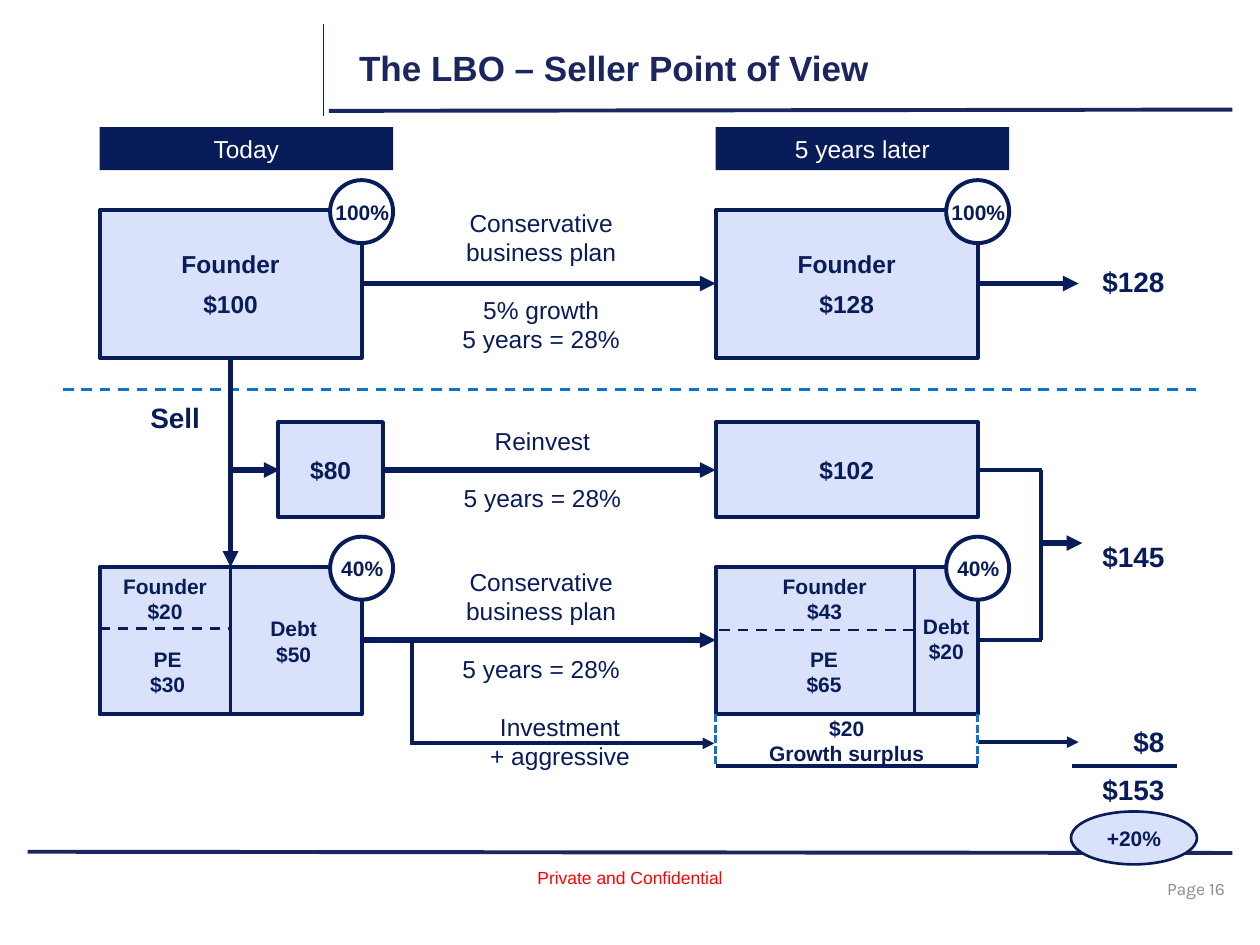
import pptx
import pptx.util
import pptx.dml.color
import pptx.enum.dml
import pptx.enum.shapes
import pptx.enum.text
import pptx.oxml
import pptx.oxml.ns
import lxml.etree

Inches = pptx.util.Inches
Pt = pptx.util.Pt
RGB = pptx.dml.color.RGBColor.from_string
Align = pptx.enum.text.PP_ALIGN
Anchor = pptx.enum.text.MSO_ANCHOR
Shape = pptx.enum.shapes.MSO_SHAPE
Dash = pptx.enum.dml.MSO_LINE

COLORS = {
    "navy": "091C5A", "rule": "1B265F", "divider": "002368", "pale": "DAE2FB",
    "blue": "0B72CF", "white": "FFFFFF", "red": "FF0000", "gray": "8C8C8C",
}

deck = pptx.Presentation()
deck.slide_width, deck.slide_height = Inches(10), Inches(7.5)
slide = deck.slides.add_slide(deck.slide_layouts[5])


def add_block(box, lines=(), size=12, bold=True, color="navy", fill=None, outline=None,
              geometry=None, align=Align.CENTER, anchor=Anchor.TOP, after=0, font="Arial", gap_at=None):
    place = [Inches(value) for value in box]
    if geometry is None:
        block = slide.shapes.add_textbox(*place)
    else:
        block = slide.shapes.add_shape(geometry, *place)
        block.shadow.inherit = False
        block.fill.solid()
        block.fill.fore_color.rgb = RGB(COLORS[fill])
        if outline:
            block.line.color.rgb = RGB(COLORS["navy"])
            block.line.width = Pt(outline)
        else:
            block.line.fill.background()
    frame = block.text_frame
    frame.word_wrap = True
    frame.vertical_anchor = anchor
    if lines:
        frame.text = "\n".join(lines)
    for index, paragraph in enumerate(frame.paragraphs):
        paragraph.alignment = align
        if after:
            paragraph.space_after = Pt(after)
        if index == gap_at:
            paragraph.space_before = Pt(16)
        for run in paragraph.runs:
            run.font.name = font
            run.font.size = Pt(size)
            run.font.bold = bold
            run.font.color.rgb = RGB(COLORS[color])


def add_line(x1, y1, x2, y2, width=2.25, color="navy", dash=None, arrow=False):
    line = slide.shapes.add_connector(
        pptx.enum.shapes.MSO_CONNECTOR.STRAIGHT, Inches(x1), Inches(y1), Inches(x2), Inches(y2))
    line.line.color.rgb = RGB(COLORS[color])
    line.line.width = Pt(width)
    if dash:
        line.line.dash_style = dash
    qn = pptx.oxml.ns.qn
    if arrow:
        lxml.etree.SubElement(line.line._get_or_add_ln(), qn("a:tailEnd"), type="triangle")
    lxml.etree.SubElement(line._element.spPr, qn("a:effectLst"))


title = slide.shapes.title
title.left, title.top, title.width, title.height = [Inches(v) for v in (2.75, 0.3, 6.75, 0.53)]
title.text_frame.text = "The LBO – Seller Point of View"
title.text_frame.vertical_anchor = Anchor.TOP
title.text_frame.margin_top = Inches(0.07)
title_line = title.text_frame.paragraphs[0]
title_line.alignment = Align.LEFT
title_line.runs[0].font.name = "Arial"
title_line.runs[0].font.size = Pt(20)
title_line.runs[0].font.bold = True
title_line.runs[0].font.color.rgb = RGB(COLORS["rule"])

add_line(0.22, 6.76, 9.78, 6.77, color="rule")
add_line(2.61, 0.88, 9.78, 0.87, color="rule")
add_line(2.57, 0.19, 2.57, 0.92, 0.75, "divider")
add_block((4.1, 6.83, 1.8, 0.27), ["Private and Confidential"], 10, False, "red")
add_block((7.49, 6.85, 2.33, 0.4), ["Page 16"], 10, False, "gray",
          align=Align.RIGHT, anchor=Anchor.MIDDLE, font="Karla")

today, later, box_width, box_height = 0.79, 5.68, 2.08, 1.17
add_line(0.5, 3.09, 9.5, 3.09, 1.5, "blue", Dash.DASH)

for left, heading, value in [(today, "Today", "$100"), (later, "5 years later", "$128")]:
    add_block((left, 1.01, 2.33, 0.34), [heading], 14, False, "white", "navy",
              geometry=Shape.RECTANGLE, anchor=Anchor.MIDDLE)
    for top, lines, share in [(1.67, ["Founder", value], "100%"), (4.5, [], "40%")]:
        add_block((left, top, box_width, box_height), lines, 14, fill="pale", outline=2.25,
                  geometry=Shape.RECTANGLE, anchor=Anchor.MIDDLE, after=6)
        add_block((left + 1.83, top - 0.24, 0.5, 0.5), fill="white", outline=2.25, geometry=Shape.OVAL)
        add_block((left + 1.75, top - 0.14, 0.67, 0.3), [share], anchor=Anchor.MIDDLE)

for left, width, value in [(2.21, 0.83, "$80"), (later, box_width, "$102")]:
    add_block((left, 3.35, width, 0.75), [value], 14, fill="pale", outline=2.25,
              geometry=Shape.RECTANGLE, anchor=Anchor.MIDDLE, after=6)

add_line(1.83, 4.5, 1.83, 5.67, 1.5)
add_line(0.79, 4.99, 1.84, 4.99, 1.5, dash=Dash.DASH)
add_line(7.26, 4.5, 7.26, 5.67, 1.5)
add_line(5.71, 5, 7.26, 5, 1.5, dash=Dash.DASH)

for left, top, width, holder, value in [
    (0.87, 4.5, 0.88, "Founder", "$20"),
    (0.87, 5.08, 0.92, "PE", "$30"),
    (1.87, 4.84, 0.92, "Debt", "$50"),
    (5.92, 4.5, 1.25, "Founder", "$43"),
    (6.08, 5.08, 0.92, "PE", "$65"),
    (7.05, 4.82, 0.92, "Debt", "$20"),
    (later, 5.63, box_width, "$20", "Growth surplus"),
]:
    add_block((left, top, width, 0.5), [holder, value])

for x1, y1, x2, y2, width in [
    (1.83, 2.83, 1.83, 4.5, 3),
    (1.84, 3.73, 2.22, 3.73, 3),
    (2.87, 2.25, later, 2.25, 3),
    (2.87, 5.08, later, 5.08, 3),
    (3.04, 3.73, later, 3.73, 3),
    (8.26, 4.31, 8.59, 4.31, 3),
    (7.76, 2.25, 8.56, 2.25, 3),
    (3.27, 5.9, 5.67, 5.9, 2.25),
    (7.76, 5.89, 8.56, 5.89, 2.25),
]:
    add_line(x1, y1, x2, y2, width, arrow=True)

for x1, y1, x2, y2 in [
    (7.77, 3.73, 8.27, 3.73),
    (7.77, 5.08, 8.27, 5.08),
    (8.26, 3.73, 8.26, 5.08),
    (3.27, 5.09, 3.27, 5.91),
    (later, 6.08, 7.76, 6.08),
    (8.51, 6.08, 9.34, 6.08),
]:
    add_line(x1, y1, x2, y2)

for x in (later, later + box_width):
    add_line(x, 5.67, x, 6.08, 1.5, "blue", Dash.SQUARE_DOT)

for left, top, height, lines, gap_at in [
    (3.42, 1.6, 1.28, ["Conservative business plan", "5% growth", "5 years = 28%"], 1),
    (3.43, 3.33, 0.81, ["Reinvest", "5 years = 28%"], 1),
    (3.42, 4.45, 1.04, ["Conservative business plan", "5 years = 28%"], 1),
    (3.57, 5.6, 0.57, ["Investment", "+ aggressive"], None),
]:
    add_block((left, top, 1.75, height), lines, 14, False, gap_at=gap_at)

add_block((0.93, 3.13, 0.92, 0.37), ["Sell"], 16)
for top, proceeds in [(2.05, "$128"), (4.23, "$145"), (5.7, "$8"), (6.08, "$153")]:
    add_block((8.51, top, 0.83, 0.37), [proceeds], 16, align=Align.RIGHT)

add_block((8.5, 6.44, 1, 0.42), ["+20%"], fill="pale", outline=1.5,
          geometry=Shape.OVAL, anchor=Anchor.MIDDLE)

deck.save("out.pptx")
